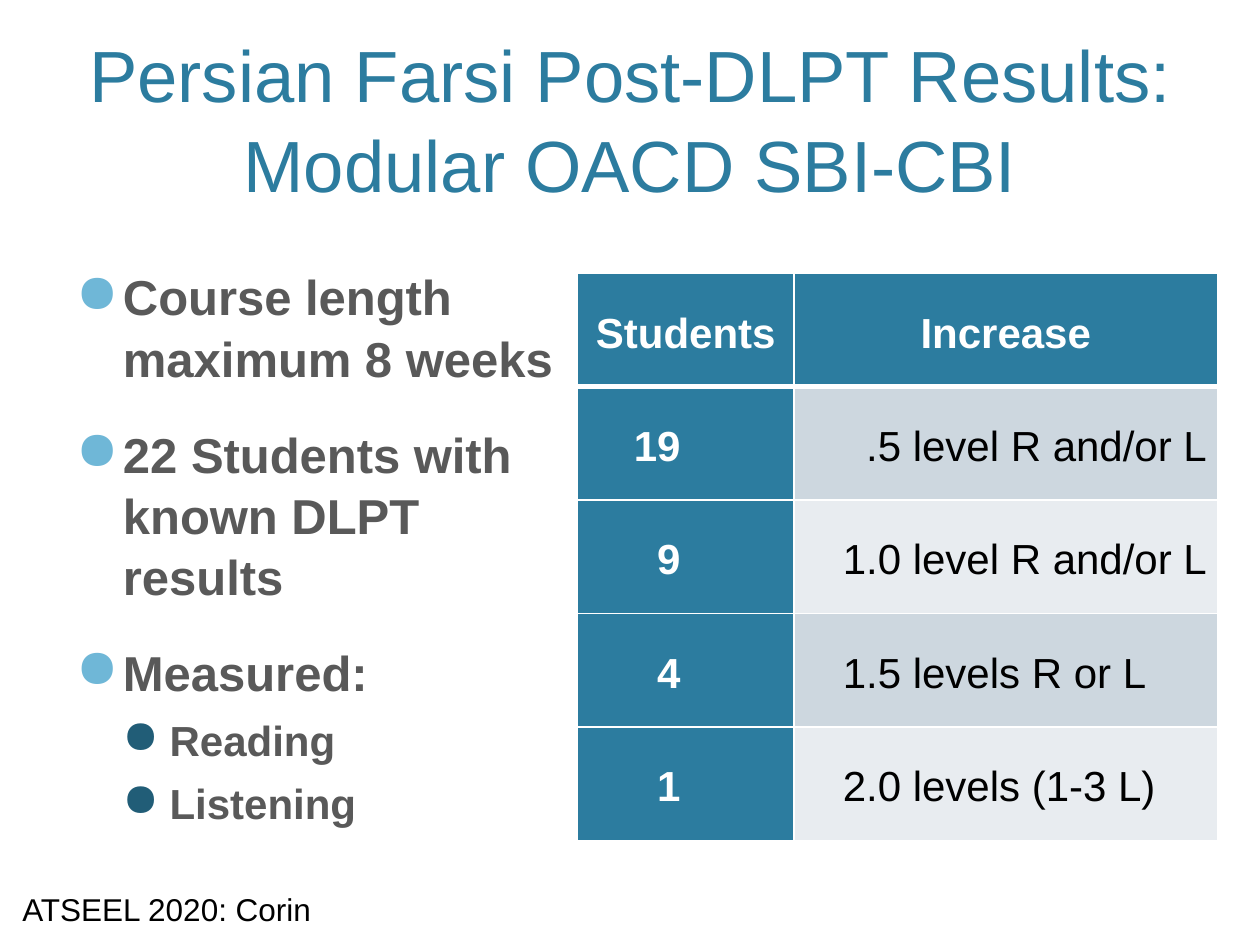
from lxml import etree
from pptx import Presentation
from pptx.dml.color import RGBColor
from pptx.enum.text import MSO_ANCHOR, PP_ALIGN
from pptx.oxml.ns import qn
from pptx.util import Cm, Pt

MIDDLE = MSO_ANCHOR.MIDDLE
CENTER, LEFT = PP_ALIGN.CENTER, PP_ALIGN.LEFT

THEME = {
    "font": "Arial",
    "teal": "2C7C9F", "grey": "595959", "black": "000000", "white": "FFFFFF",
    "bands": ("CDD7DF", "E8ECF0"),
    "bullets": ("6FB7D7", "215D77"),
    "title_size": 41.4, "body_sizes": (28, 24), "table_size": 24, "footer_size": 18,
}


def write(paragraph, text, size, color, bold=False, **layout):
    """Fill a paragraph, format its runs and set its paragraph properties."""
    paragraph.text = text
    for run in paragraph.runs:
        font_format = {"name": THEME["font"], "size": Pt(size), "bold": bold}
        for name, value in font_format.items():
            setattr(run.font, name, value)
        run.font.color.rgb = RGBColor.from_string(color)
    for name, value in layout.items():
        setattr(paragraph, name, value)


def add_xml(parent, tag, **attributes):
    return etree.SubElement(parent, qn(tag), attributes)


prs = Presentation()
prs.slide_width, prs.slide_height = Cm(25.4), Cm(19.05)
slide = prs.slides.add_slide(prs.slide_layouts[5])

# Title
title = slide.shapes.title
title_box = {"left": Cm(1.27), "top": Cm(0.76), "width": Cm(22.86), "height": Cm(3.18)}
for name, value in title_box.items():
    setattr(title, name, value)
title.text_frame.vertical_anchor = MIDDLE
write(title.text_frame.paragraphs[0],
      "Persian Farsi Post-DLPT Results:\vModular OACD SBI-CBI",
      THEME["title_size"], THEME["teal"], alignment=CENTER, line_spacing=1.04)

# Course facts
facts = [
    (0, "Course length maximum 8 weeks"),
    (0, "22 Students with\vknown DLPT\vresults"),
    (0, "Measured:"),
    (1, "Reading"),
    (1, "Listening"),
]
facts_frame = slide.shapes.add_textbox(Cm(1.27), Cm(5.21), Cm(11.23), Cm(12.57)).text_frame
facts_frame.word_wrap = True
for index, (level, fact) in enumerate(facts):
    paragraph = facts_frame.add_paragraph() if index else facts_frame.paragraphs[0]
    write(paragraph, fact, THEME["body_sizes"][level], THEME["grey"], True,
          level=level, line_spacing=1.04, space_before=Pt((20, 6)[level]))
    properties = paragraph._p.get_or_add_pPr()
    properties.set("marL", str(Cm((0.96, 1.9)[level])))
    properties.set("indent", str(-Cm(0.95)))
    bullet_color = add_xml(properties, "a:buClr")
    add_xml(bullet_color, "a:srgbClr", val=THEME["bullets"][level])
    add_xml(properties, "a:buSzPct", val="110000")
    add_xml(properties, "a:buChar", char="●")

# Results table
results = [
    ("Students", "Increase"),
    ("19", ".5 level R and/or L"),
    ("9", "1.0 level R and/or L"),
    ("4", "1.5 levels R or L"),
    ("1", "2.0 levels (1-3 L)"),
]
column_widths = (Cm(4.37), Cm(8.53))
decimal_tabs = (Cm(1.9), Cm(1.27))
cell_format = {"margin_left": Cm(0.18), "margin_right": Cm(0.18),
               "margin_top": 0, "margin_bottom": 0, "vertical_anchor": MIDDLE}
table = slide.shapes.add_table(len(results), 2, Cm(11.64), Cm(5.51),
                               sum(column_widths), Cm(11.43)).table
for column, width in zip(table.columns, column_widths):
    column.width = width

for row, record in enumerate(results):
    for col, entry in enumerate(record):
        cell = table.cell(row, col)
        for name, value in cell_format.items():
            setattr(cell, name, value)
        is_header = row == 0
        is_label = is_header or col == 0
        fill_color = THEME["teal"] if is_label else THEME["bands"][(row - 1) % 2]
        paragraph = cell.text_frame.paragraphs[0]
        write(paragraph, entry if is_header else "\t" + entry, THEME["table_size"],
              THEME["white"] if is_label else THEME["black"], is_label,
              alignment=CENTER if is_header else LEFT, line_spacing=1.15)
        if not is_header:
            tabs = add_xml(paragraph._p.get_or_add_pPr(), "a:tabLst")
            add_xml(tabs, "a:tab", pos=str(decimal_tabs[col]), algn="dec")

        cell_properties = cell._tc.get_or_add_tcPr()
        for side in ("L", "R", "T", "B"):
            heavy = (row, side) in ((0, "B"), (1, "T"))
            border = add_xml(cell_properties, "a:ln" + side, w=str(Pt(3 if heavy else 1)))
            add_xml(add_xml(border, "a:solidFill"), "a:srgbClr", val=THEME["white"])
        cell.fill.solid()
        cell.fill.fore_color.rgb = RGBColor.from_string(fill_color)

# Event line
event = slide.shapes.add_textbox(Cm(0.2), Cm(17.81), Cm(6.4), Cm(1.02)).text_frame
event.word_wrap = False
write(event.paragraphs[0], "ATSEEL 2020: Corin", THEME["footer_size"], THEME["black"])

prs.save("out.pptx")
